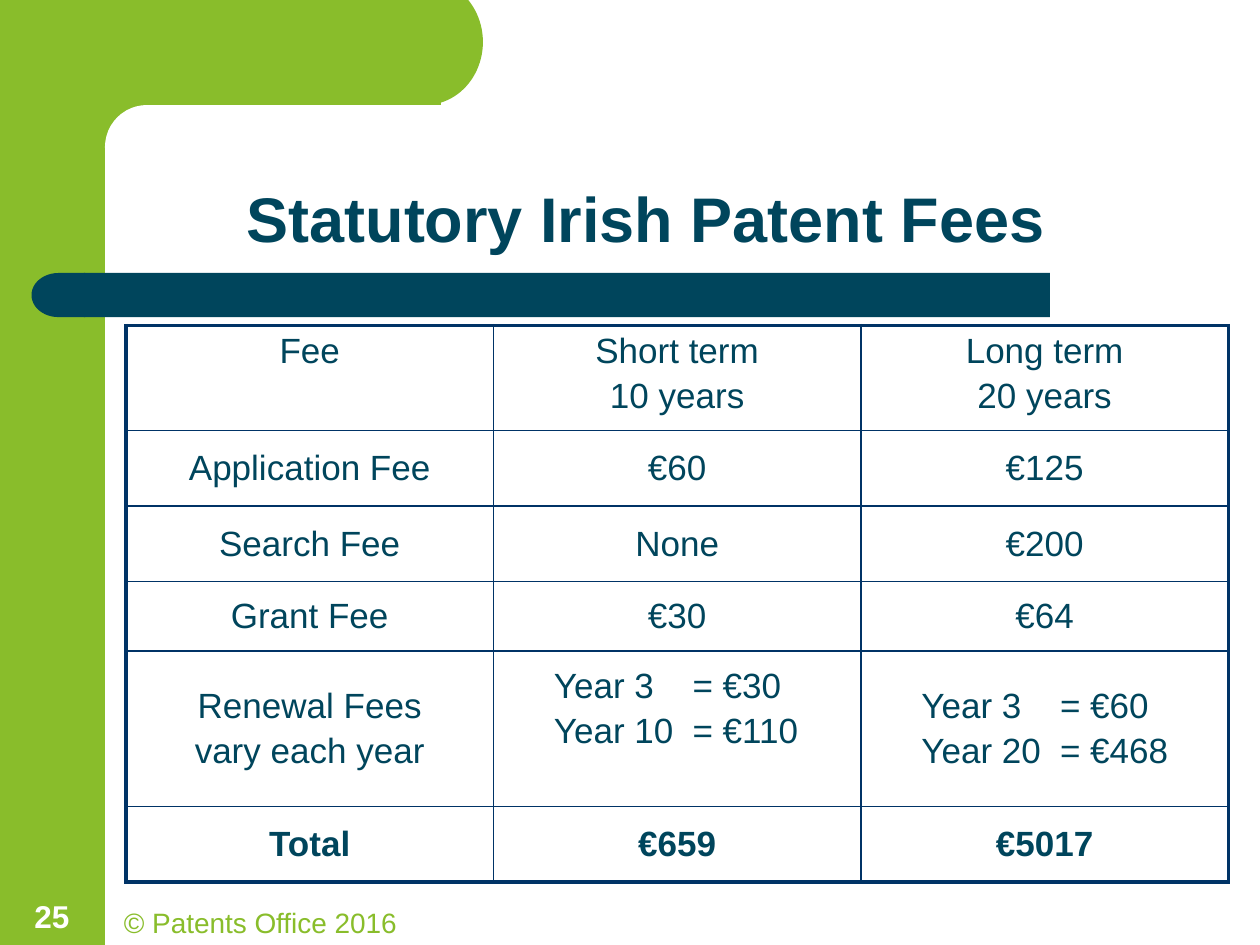
from lxml.etree import SubElement
from pptx import Presentation
from pptx.dml.color import RGBColor
from pptx.enum.shapes import MSO_SHAPE as Shape
from pptx.enum.text import MSO_ANCHOR as Anchor, PP_ALIGN as Align
from pptx.oxml.ns import qn
from pptx.util import Inches, Pt

GREEN, TEAL, NAVY, WHITE = "89BD2B", "00455C", "003366", "FFFFFF"
UNIT = Inches(1) // 12  # the slide is a grid of 120 columns by 90 rows
COLUMNS, ROWS = 120, 90

ROW_HEIGHTS = [10, 7.2, 7.2, 6.6, 14.8, 7.2]
FEES = [
    ["Fee", "Short term\n10 years", "Long term\n20 years"],
    ["Application Fee", "€60", "€125"],
    ["Search Fee", "None", "€200"],
    ["Grant Fee", "€30", "€64"],
    ["Renewal Fees\nvary each year",
     "Year 3\t= €30\nYear 10\t= €110", "Year 3\t= €60\nYear 20\t= €468"],
    ["Total", "€659", "€5017"],
]


def color(value):
    return RGBColor.from_string(value)


def grid(*cells):
    return [round(cell * UNIT) for cell in cells]


def write(paragraph, text, size, tone, bold=False, align=Align.CENTER):
    paragraph.alignment = align
    run = paragraph.add_run()
    run.text = text
    font = run.font
    font.name, font.size, font.bold = "Arial", Pt(size), bold
    font.color.rgb = color(tone)


def add_block(slide, kind, box, tone):
    block = slide.shapes.add_shape(kind, *grid(*box))
    block.shadow.inherit = False
    block.fill.solid()
    block.fill.fore_color.rgb = color(tone)
    block.line.fill.background()
    return block


def add_frame(slide, left, top, width, height):
    """Green side and top bands with a rounded inner corner and end."""
    side, band = 10, 14
    add_block(slide, Shape.RECTANGLE, (left, top, side, height), GREEN)
    add_block(slide, Shape.RECTANGLE, (left + 9, top, 33, band), GREEN)
    corner = add_block(slide, Shape.ROUNDED_RECTANGLE,
                       (left + side, top + 10, width - 53, 8), WHITE)
    corner.adjustments[0] = 0.5
    add_block(slide, Shape.OVAL, (left + 35, top - 2, 11, 12), GREEN)


def add_title_bar(slide, left, top, width, height):
    cap = 5
    add_block(slide, Shape.RECTANGLE,
              (left + cap, top, width - cap, height), TEAL)
    end = add_block(slide, Shape.FLOWCHART_DELAY,
                    (left, top, cap + 0.1, height), TEAL)
    end.rotation = 180


def add_title(slide, *box):
    title = slide.shapes.title
    title.left, title.top, title.width, title.height = grid(*box)
    frame = title.text_frame
    frame.vertical_anchor = Anchor.BOTTOM
    heading = frame.paragraphs[0]
    heading.line_spacing = 0.9
    write(heading, "Statutory Irish Patent Fees", 36, TEAL, True)


def add_label(slide, box, text, size, tone, bold, align):
    frame = slide.shapes.add_textbox(*grid(*box)).text_frame
    frame.word_wrap = True
    frame.vertical_anchor = Anchor.BOTTOM
    write(frame.paragraphs[0], text, size, tone, bold, align)


def set_borders(cell, outer_sides):
    properties = cell._tc.get_or_add_tcPr()
    for side in "LRTB":
        width = Pt(2.25 if side in outer_sides else 1)
        line = SubElement(properties, qn(f"a:ln{side}"), w=str(int(width)))
        fill = SubElement(line, qn("a:solidFill"))
        SubElement(fill, qn("a:srgbClr"), val=NAVY)


def add_tab_stop(paragraph, position):
    stops = SubElement(paragraph._p.get_or_add_pPr(), qn("a:tabLst"))
    SubElement(stops, qn("a:tab"), pos=str(int(position)), algn="l")


def fill_cell(cell, text, bold):
    frame = cell.text_frame
    for index, line in enumerate(text.split("\n")):
        paragraph = frame.paragraphs[0] if index == 0 else frame.add_paragraph()
        if index:
            paragraph.space_before = Pt(3.5)
        tabbed = "\t" in line
        if tabbed:
            add_tab_stop(paragraph, Inches(1.1))
            cell.margin_left = Inches(0.48)
        write(paragraph, line, 20, TEAL, bold,
              Align.LEFT if tabbed else Align.CENTER)


def add_fee_table(slide, left, top, width, height):
    last_row, last_column = len(FEES) - 1, len(FEES[0]) - 1
    table = slide.shapes.add_table(
        len(FEES), len(FEES[0]), *grid(left, top, width, height)).table
    table.first_row = table.horz_banding = False
    for column in table.columns:
        column.width = grid(width / len(FEES[0]))[0]
    for row, row_height in zip(table.rows, ROW_HEIGHTS):
        row.height = grid(row_height)[0]
    for r, fees in enumerate(FEES):
        for c, text in enumerate(fees):
            cell = table.cell(r, c)
            edges = {"L": c == 0, "R": c == last_column,
                     "T": r == 0, "B": r == last_row}
            set_borders(cell, [side for side, outer in edges.items() if outer])
            cell.fill.background()
            cell.vertical_anchor = Anchor.MIDDLE if r else Anchor.TOP
            fill_cell(cell, text, bold=r == last_row)
    short_term_renewal = table.cell(4, 1)
    short_term_renewal.margin_bottom = Inches(0.37)


def main():
    deck = Presentation()
    deck.slide_width, deck.slide_height = grid(COLUMNS, ROWS)
    slide = deck.slides.add_slide(deck.slide_layouts[5])
    add_frame(slide, 0, 0, COLUMNS, ROWS)
    add_title_bar(slide, 3, 26, 97, 4.2)
    add_label(slide, (3, 85.6, 36, 4.4), "© Patents Office 2016",
              16, GREEN, False, Align.RIGHT)
    add_title(slide, 12, 13.8, 99, 11.2)
    add_fee_table(slide, 12, 31, 105, sum(ROW_HEIGHTS))
    add_label(slide, (1.1, 84.8, 7.7, 4.8), "25", 18, WHITE, True, Align.CENTER)
    deck.save("out.pptx")


if __name__ == "__main__":
    main()
